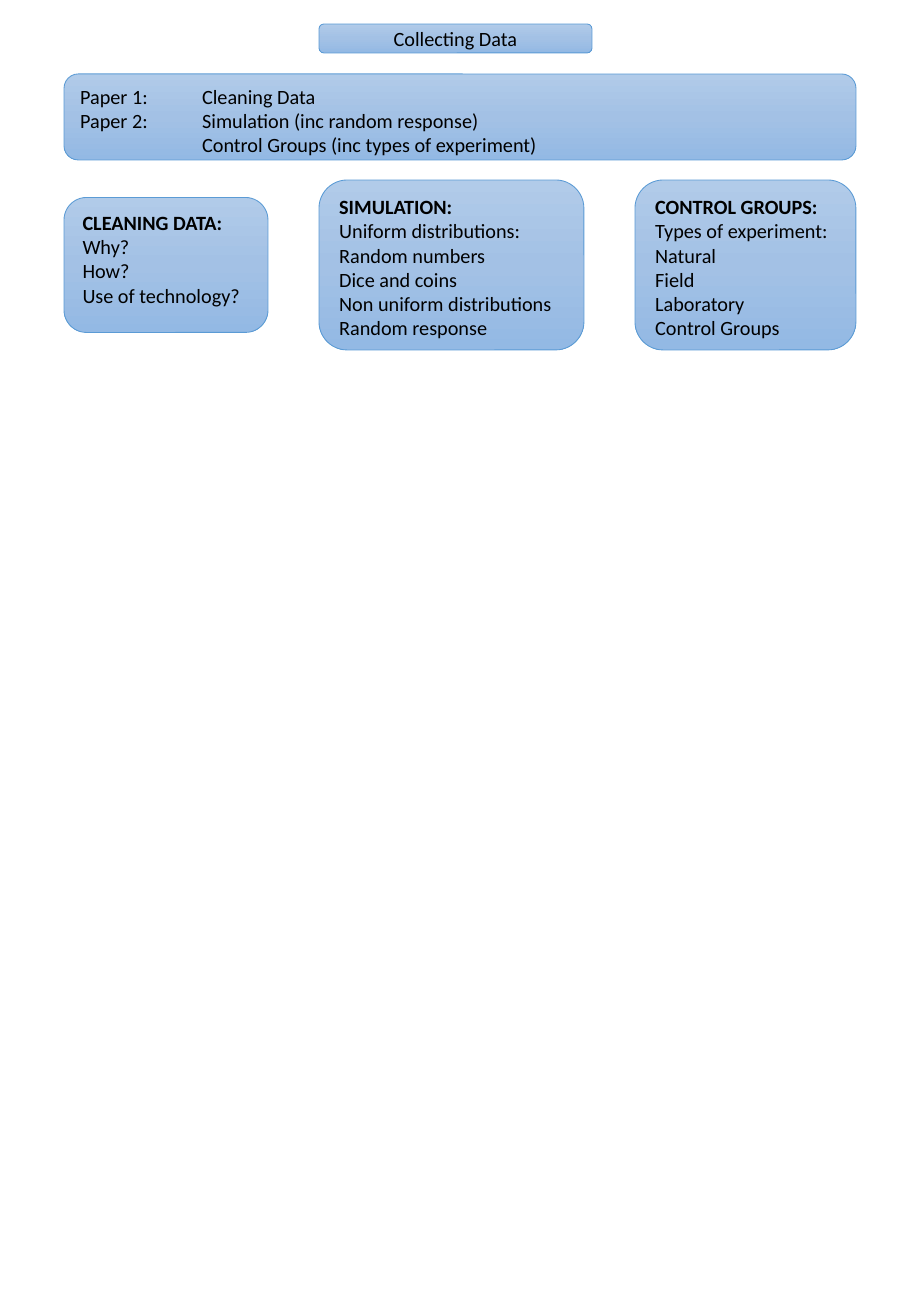
"""Build the Collecting Data topic overview page."""
from copy import deepcopy

from lxml import etree
from pptx import Presentation, util as u
from pptx.dml.color import RGBColor
from pptx.enum import shapes, text
from pptx.oxml.ns import qn

PX = u.Inches(1) / 121.5
PAGE_SIZE = (911, 1316)
LEFT, MIDDLE, RIGHT = 64, 319, 856
TOPIC_CENTRE = 265
GRADIENT = [(0, "B1CBE9"), (0.5, "A3C1E5"), (1, "93B9E4")]
BORDER, INK = "5B9BD5", "000000"
TAB_STOPS = (61, 122)

TITLE = ["Collecting Data"]
PAPERS = [
    "Paper 1: \tCleaning Data",
    "Paper 2: \tSimulation (inc random response)",
    "\t\tControl Groups (inc types of experiment)",
]
TOPICS = [
    (LEFT, 204, 135, ["CLEANING DATA:", "Why?", "How?", "Use of technology?"]),
    (MIDDLE, 265, 170, ["SIMULATION:", "Uniform distributions:\nRandom numbers",
                        "Dice and coins", "Non uniform distributions",
                        "Random response"]),
    (RIGHT - 221, 221, 170, ["CONTROL GROUPS:", "Types of experiment:", "Natural",
                             "Field", "Laboratory", "Control Groups"]),
]


def emu(px):
    """Convert px to EMU."""
    return u.Emu(round(px * PX))


def colour(code):
    """Turn a hex string into a colour."""
    return RGBColor.from_string(code)


def paint(box):
    """Give a box its three-stop gradient and thin border."""
    box.shadow.inherit = False
    box.fill.gradient()
    box.fill.gradient_angle = 270
    stop_list = box._element.spPr.find(".//" + qn("a:gsLst"))
    stop_list.insert(1, deepcopy(stop_list[0]))
    for stop, (position, code) in zip(box.fill.gradient_stops, GRADIENT):
        stop.position = position
        stop.color.rgb = colour(code)
    box.line.color.rgb = colour(BORDER)
    box.line.width = u.Pt(0.5)


def add_tabs(para):
    """Add the tab stops to a paragraph."""
    tabs = etree.SubElement(para._p.get_or_add_pPr(), qn("a:tabLst"))
    for px in TAB_STOPS:
        etree.SubElement(tabs, qn("a:tab"), pos=str(emu(px)), algn="l")


def add_box(page, place, lines, headed=False, centred=False):
    """Add a rounded box holding one paragraph per line."""
    box = page.shapes.add_shape(shapes.MSO_SHAPE.ROUNDED_RECTANGLE, *map(emu, place))
    paint(box)
    frame = box.text_frame
    frame.word_wrap = True
    frame.vertical_anchor = text.MSO_ANCHOR.MIDDLE if centred else text.MSO_ANCHOR.TOP
    for row, line in enumerate(lines):
        para = frame.add_paragraph() if row else frame.paragraphs[0]
        para.alignment = text.PP_ALIGN.CENTER if centred else text.PP_ALIGN.LEFT
        if "\t" in line:
            add_tabs(para)
        for part_no, part in enumerate(line.split("\n")):
            if part_no:
                para.add_line_break()
            span = para.add_run()
            span.text = part
            span.font.name = "Calibri"
            span.font.size = u.Pt(12)
            span.font.bold = headed and row == 0
            span.font.color.rgb = colour(INK)


def main():
    """Build and save the deck."""
    deck = Presentation()
    deck.slide_width, deck.slide_height = map(emu, PAGE_SIZE)
    page = deck.slides.add_slide(deck.slide_layouts[6])
    add_box(page, (MIDDLE, 24, 273, 29), TITLE, centred=True)
    add_box(page, (LEFT, 74, RIGHT - LEFT, 86), PAPERS)
    for left, width, height, lines in TOPICS:
        top = TOPIC_CENTRE - height / 2
        add_box(page, (left, top, width, height), lines, headed=True)
    deck.save("out.pptx")


if __name__ == "__main__":
    main()
